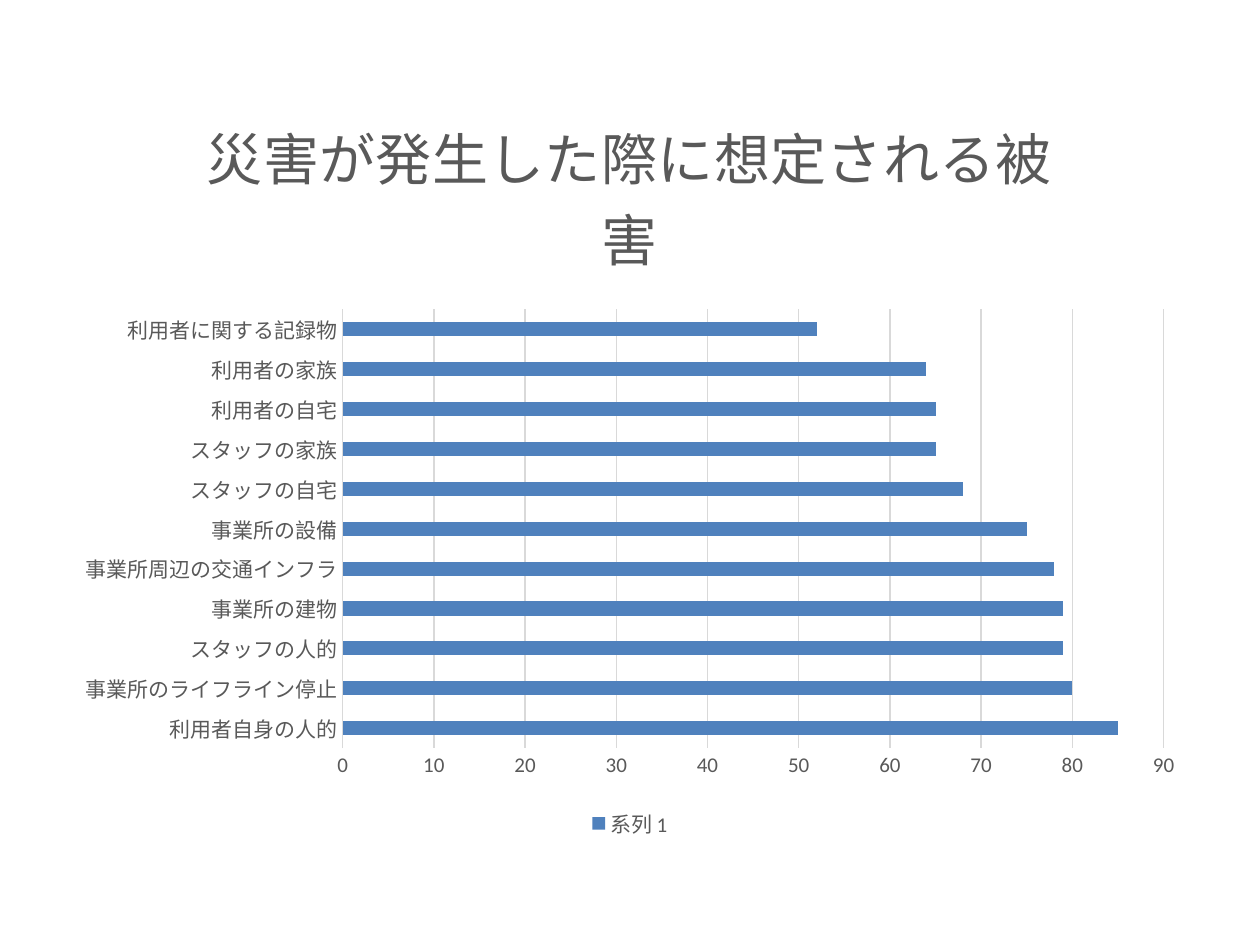
from pptx import Presentation
from pptx.chart.data import CategoryChartData
from pptx.dml.color import RGBColor
from pptx.enum.chart import XL_CHART_TYPE as Kind, XL_LEGEND_POSITION as Side
from pptx.enum.chart import XL_TICK_MARK as Tick
from pptx.util import Pt

GREY, PALE, BLUE = "595959", "D9D9D9", "4F81BD"
DAMAGE = {
    "利用者自身の人的": 85,
    "事業所のライフライン停止": 80,
    "スタッフの人的": 79,
    "事業所の建物": 79,
    "事業所周辺の交通インフラ": 78,
    "事業所の設備": 75,
    "スタッフの自宅": 68,
    "スタッフの家族": 65,
    "利用者の自宅": 65,
    "利用者の家族": 64,
    "利用者に関する記録物": 52,
}


def color(code):
    return RGBColor.from_string(code)


def style(font, size):
    look = {"name": "Calibri", "size": Pt(size), "bold": False}
    for key, value in look.items():
        setattr(font, key, value)
    font.color.rgb = color(GREY)


deck = Presentation()
deck.slide_width, deck.slide_height = Pt(720), Pt(540)
slide = deck.slides.add_slide(deck.slide_layouts[6])

data = CategoryChartData()
data.categories = list(DAMAGE)
data.add_series("系列 1", list(DAMAGE.values()))
chart = slide.shapes.add_chart(
    Kind.BAR_CLUSTERED, Pt(36), Pt(43.2), Pt(648), Pt(439.2), data
).chart
style(chart.font, 12)

# Title
chart.has_title = True
title = chart.chart_title
title.include_in_layout = False
title.text_frame.text = "災害が発生した際に想定される被害"
style(title.text_frame.paragraphs[0].runs[0].font, 32)

# Legend
chart.has_legend = True
legend = chart.legend
legend.position = Side.BOTTOM
legend.include_in_layout = False
style(legend.font, 12)

# Axes
cats, vals = chart.category_axis, chart.value_axis
for axis in (cats, vals):
    axis.major_tick_mark = axis.minor_tick_mark = Tick.NONE
    style(axis.tick_labels.font, 12)
cats.has_major_gridlines = False
vals.has_major_gridlines = True
vals.minimum_scale, vals.maximum_scale, vals.major_unit = 0, 90, 10
for line in (cats.format.line, vals.major_gridlines.format.line):
    line.color.rgb = color(PALE)
    line.width = Pt(0.75)
vals.format.line.fill.background()

# Bars
plot = chart.plots[0]
plot.gap_width = 182
plot.vary_by_categories = False
fill = plot.series[0].format.fill
fill.solid()
fill.fore_color.rgb = color(BLUE)

deck.save("out.pptx")
